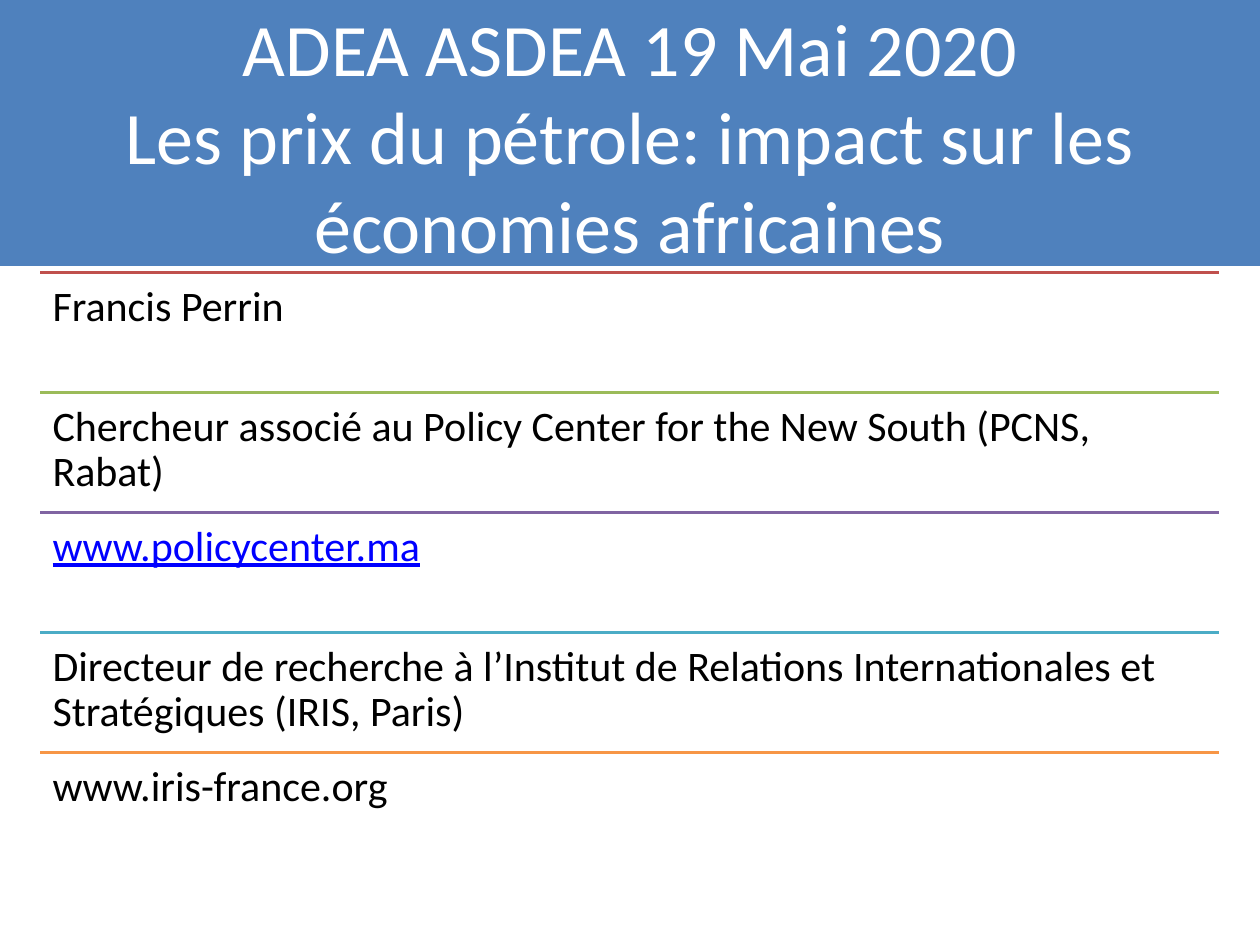
"""Builds the title slide of a talk on oil prices and African economies."""
from lxml import etree
from pptx import Presentation
from pptx import util as u
from pptx.dml.color import RGBColor
from pptx.enum import shapes, text
from pptx.oxml.ns import qn

FONT = "Calibri"
WHITE, BLACK, BLUE, LINK = "FFFFFF", "000000", "4F81BD", "0000FF"
LEFT, WIDTH = 0.81, 23.77
ROWS_TOP, ROW_HEIGHT = 5.49, 2.42
TITLE_LINES = [
    "ADEA ASDEA 19 Mai 2020",
    "Les prix du pétrole: impact sur les économies africaines",
]
ROWS = [
    ("Francis Perrin", "C0504D", False),
    ("Chercheur associé au Policy Center for the New South (PCNS, Rabat)", "9BBB59", False),
    ("www.policycenter.ma", "8064A2", True),
    ("Directeur de recherche à l’Institut de Relations Internationales et "
     "Stratégiques (IRIS, Paris)", "4BACC6", False),
    ("www.iris-france.org", "F79646", False),
]


def color(value):
    """Return the colour for a hex string."""
    return RGBColor.from_string(value)


def add_run(paragraph, words, size, value, underline=False):
    """Add one formatted run to a paragraph."""
    run = paragraph.add_run()
    run.text = words
    run.font.name = FONT
    run.font.size = u.Pt(size)
    run.font.color.rgb = color(value)
    if underline:
        run.font.underline = True


def add_text_box(slide, top, height, anchor):
    """Add a wrapping text box across the content width and return its paragraph."""
    shape = slide.shapes.add_textbox(u.Cm(LEFT), u.Cm(top), u.Cm(WIDTH), u.Cm(height))
    frame = shape.text_frame
    frame.word_wrap = True
    frame.vertical_anchor = anchor
    frame.margin_top = frame.margin_bottom = u.Cm(0.25)
    return frame.paragraphs[0]


def add_banner(slide, width):
    """Add the coloured band behind the title."""
    shape = slide.shapes.add_shape(
        shapes.MSO_SHAPE.RECTANGLE, 0, u.Cm(-0.03), width, u.Cm(5.39))
    shape.shadow.inherit = False
    shape.fill.solid()
    shape.fill.fore_color.rgb = color(BLUE)
    shape.line.fill.background()


def add_title(slide):
    """Add the centred title with its line break."""
    paragraph = add_text_box(slide, 0.89, 3.68, text.MSO_ANCHOR.MIDDLE)
    paragraph.alignment = text.PP_ALIGN.CENTER
    for index, line in enumerate(TITLE_LINES):
        if index:
            paragraph.add_line_break()
        add_run(paragraph, line, 42.3, WHITE)


def add_rule(slide, top, value):
    """Add a coloured horizontal line across the content width."""
    connector = slide.shapes.add_connector(
        shapes.MSO_CONNECTOR.STRAIGHT,
        u.Cm(LEFT), u.Cm(top), u.Cm(LEFT + WIDTH), u.Cm(top))
    connector.line.color.rgb = color(value)
    connector.line.width = u.Pt(2)
    etree.SubElement(connector._element.spPr, qn("a:effectLst"))


def add_row(slide, top, words, rule_color, is_link):
    """Add a rule and the text below it."""
    add_rule(slide, top, rule_color)
    paragraph = add_text_box(slide, top, ROW_HEIGHT, text.MSO_ANCHOR.TOP)
    paragraph.line_spacing = 0.9
    paragraph.space_after = u.Pt(8.4)
    add_run(paragraph, words, 24, LINK if is_link else BLACK, is_link)


def main():
    """Build and save the slide."""
    presentation = Presentation()
    presentation.slide_width = u.Cm(25.4)
    presentation.slide_height = u.Cm(19.05)
    slide = presentation.slides.add_slide(presentation.slide_layouts[6])
    add_banner(slide, presentation.slide_width)
    add_title(slide)
    for index, row in enumerate(ROWS):
        add_row(slide, ROWS_TOP + index * ROW_HEIGHT, *row)
    presentation.save("out.pptx")


if __name__ == "__main__":
    main()
